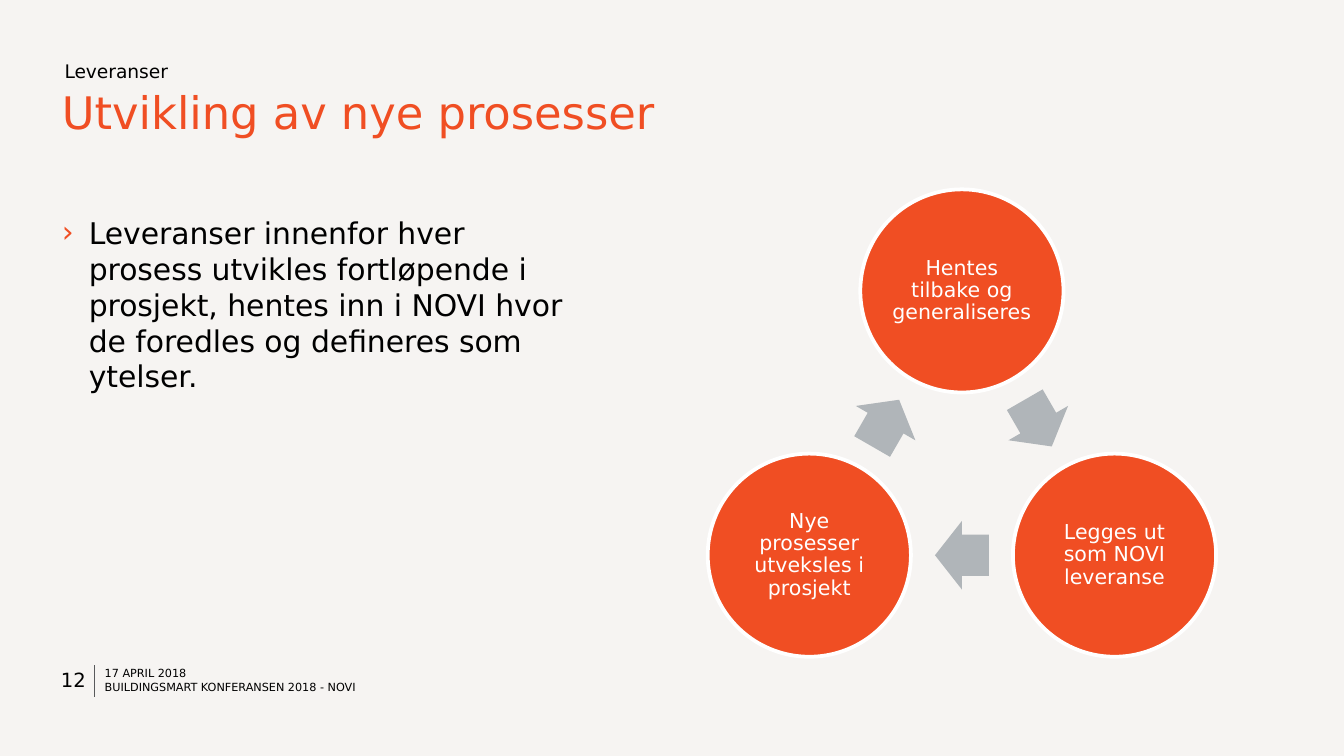
from math import cos, radians, sin

from lxml.etree import SubElement
from pptx import Presentation
from pptx.dml.color import RGBColor
from pptx.enum.shapes import MSO_CONNECTOR as Connector, MSO_SHAPE as Shape
from pptx.enum.text import MSO_ANCHOR as Anchor, PP_ALIGN as Align
from pptx.oxml.ns import qn
from pptx.util import Cm, Pt

FONT = "DejaVu Sans"
ORANGE, GREY, DARK_GREY = "F04E23", "B0B5B9", "58595B"
BLACK, WHITE, BACKGROUND = "000000", "FFFFFF", "F6F4F2"


def color(hex_code):
    return RGBColor.from_string(hex_code)


class SlideBuilder:
    def __init__(self, slide):
        self.slide = slide
        slide.background.fill.solid()
        slide.background.fill.fore_color.rgb = color(BACKGROUND)

    def fill_frame(self, frame, text, size, text_color, anchor, align, spacing,
                   margins, bullet=None):
        frame.word_wrap = True
        frame.vertical_anchor = anchor
        (frame.margin_left, frame.margin_top,
         frame.margin_right, frame.margin_bottom) = map(Cm, margins)
        paragraph = frame.paragraphs[0]
        paragraph.text = text
        paragraph.alignment = align
        paragraph.line_spacing = spacing
        if bullet:
            self.add_bullet(paragraph, bullet)
        paragraph.font.name = FONT
        paragraph.font.size = Pt(size)
        paragraph.font.color.rgb = color(text_color)

    def add_bullet(self, paragraph, character, indent=0.51):
        properties = paragraph._p.get_or_add_pPr()
        properties.set("marL", str(Cm(indent)))
        properties.set("indent", str(-Cm(indent)))
        bullet_color = SubElement(properties, qn("a:buClr"))
        SubElement(bullet_color, qn("a:srgbClr"), val=ORANGE)
        SubElement(properties, qn("a:buFont"), typeface=FONT)
        SubElement(properties, qn("a:buChar"), char=character)

    def text(self, text, left, top, width, height, size, text_color=BLACK,
             anchor=Anchor.TOP, align=Align.LEFT, spacing=None,
             margins=(0, 0, 0, 0), bullet=None):
        box = self.slide.shapes.add_textbox(*map(Cm, (left, top, width, height)))
        self.fill_frame(box.text_frame, text, size, text_color, anchor, align,
                        spacing, margins, bullet)

    def centred_shape(self, kind, x, y, width, height, fill):
        shape = self.slide.shapes.add_shape(
            kind, Cm(x - width / 2), Cm(y - height / 2), Cm(width), Cm(height))
        shape.shadow.inherit = False
        shape.fill.solid()
        shape.fill.fore_color.rgb = color(fill)
        return shape

    def circle(self, text, x, y, diameter=3.84):
        shape = self.centred_shape(Shape.OVAL, x, y, diameter, diameter, ORANGE)
        shape.line.color.rgb = color(WHITE)
        shape.line.width = Pt(2)
        self.fill_frame(shape.text_frame, text, 11, WHITE, Anchor.MIDDLE,
                        Align.CENTER, 0.9, (0.04, 0.04, 0.04, 0.04))

    def arrow(self, x, y, rotation):
        shape = self.centred_shape(Shape.RIGHT_ARROW, x, y, 1.02, 1.3, GREY)
        shape.line.fill.background()
        shape.adjustments[0] = 0.6
        shape.adjustments[1] = 0.5
        shape.rotation = rotation

    def line(self, x1, y1, x2, y2):
        connector = self.slide.shapes.add_connector(
            Connector.STRAIGHT, *map(Cm, (x1, y1, x2, y2)))
        connector.line.color.rgb = color(DARK_GREY)
        connector.line.width = Pt(0.25)
        SubElement(connector._element.spPr, qn("a:effectLst"))

    def cycle(self, labels, x, y, radius):
        """Place circles clockwise from the top, with an arrow midway to each next one."""
        step = 360 / len(labels)
        arrow_radius = radius * cos(radians(step / 2))
        for index, label in enumerate(labels):
            angle = index * step - 90
            self.circle(label, x + radius * cos(radians(angle)),
                        y + radius * sin(radians(angle)))
            angle += step / 2
            self.arrow(x + arrow_radius * cos(radians(angle)),
                       y + arrow_radius * sin(radians(angle)), angle + 90)


def main():
    presentation = Presentation()
    presentation.slide_width = Cm(25.4)
    presentation.slide_height = Cm(14.29)
    builder = SlideBuilder(
        presentation.slides.add_slide(presentation.slide_layouts[6]))

    builder.text("Leveranser", 1.17, 1.14, 23.06, 0.53, 10,
                 margins=(0.05, 0, 0, 0))
    builder.text("Utvikling av nye prosesser", 1.17, 1.7, 23.06, 1.88, 24,
                 ORANGE, spacing=Pt(26), margins=(0, 0, 0, 0.1))
    builder.text("Leveranser innenfor hver prosess utvikles fortløpende i "
                 "prosjekt, hentes inn i NOVI hvor de foredles og defineres "
                 "som ytelser.", 1.17, 4.06, 9.78, 7.85, 16, bullet="›")

    builder.cycle(["Hentes tilbake og generaliseres",
                   "Legges ut som NOVI leveranse",
                   "Nye prosesser utveksles i prosjekt"], 18.18, 8.83, 3.33)

    builder.line(1.78, 12.57, 1.78, 13.18)
    builder.text("12", 0.48, 12.42, 1.14, 1.07, 10.5, anchor=Anchor.MIDDLE,
                 align=Align.RIGHT, spacing=Pt(6))
    footer = ["17 APRIL 2018", "BUILDINGSMART KONFERANSEN 2018 - NOVI"]
    for index, text in enumerate(footer):
        builder.text(text, 1.98, 12.65 + index * 0.26, 5.44, 0.19, 6,
                     anchor=Anchor.MIDDLE, spacing=Pt(6))

    presentation.save("out.pptx")


if __name__ == "__main__":
    main()
